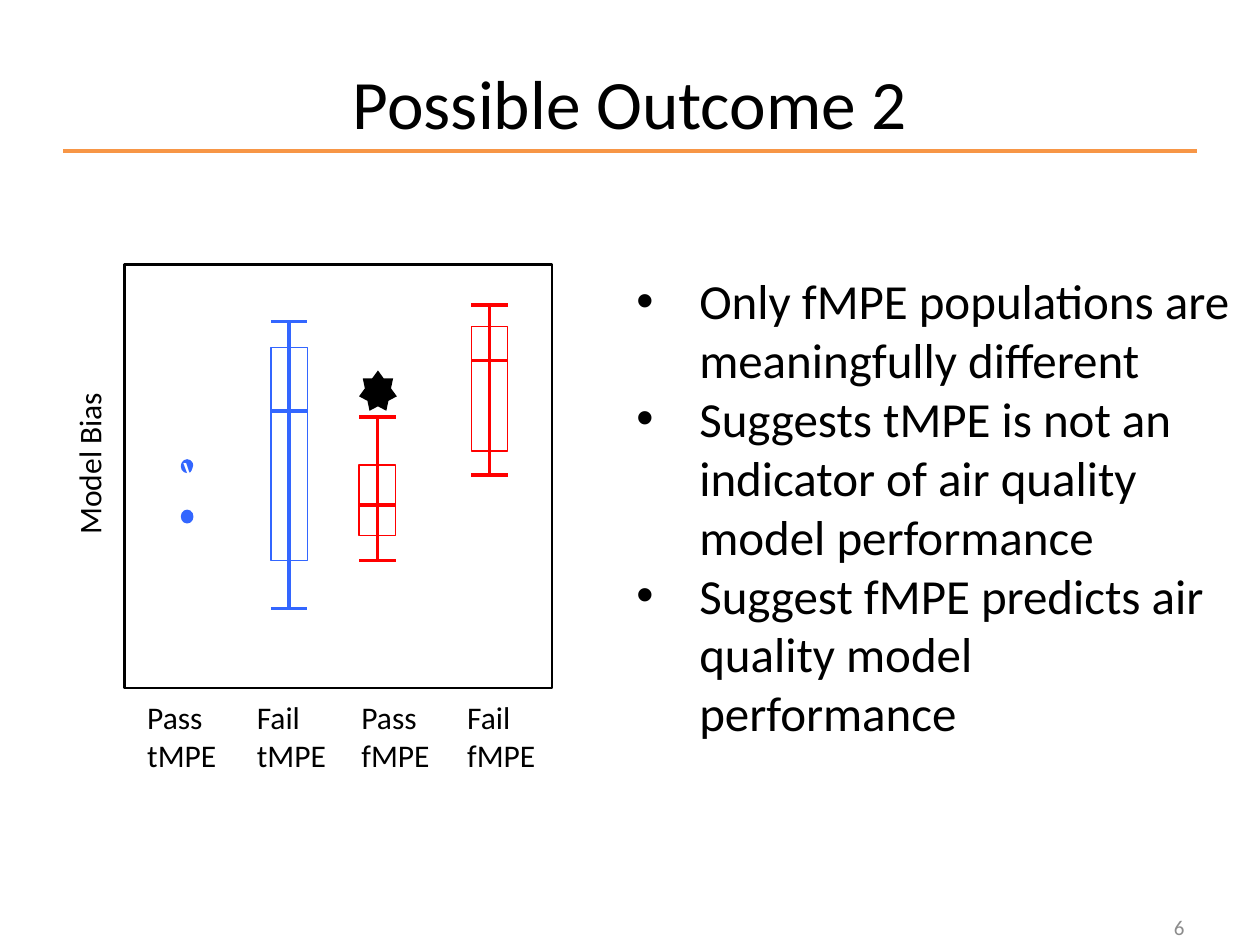
from lxml import etree
from pptx import Presentation
from pptx.dml.color import RGBColor
from pptx.enum.shapes import MSO_CONNECTOR, MSO_SHAPE
from pptx.enum.text import MSO_ANCHOR, MSO_AUTO_SIZE, PP_ALIGN
from pptx.oxml.ns import qn
from pptx.util import Inches, Pt

STRAIGHT = MSO_CONNECTOR.STRAIGHT
RECTANGLE, OVAL, STAR = MSO_SHAPE.RECTANGLE, MSO_SHAPE.OVAL, MSO_SHAPE.STAR_7_POINT
LEFT, CENTER, RIGHT = PP_ALIGN.LEFT, PP_ALIGN.CENTER, PP_ALIGN.RIGHT
TOP, MIDDLE = MSO_ANCHOR.TOP, MSO_ANCHOR.MIDDLE
COLORS = {name: RGBColor.from_string(value) for name, value in {
    "black": "000000", "white": "FFFFFF", "gray": "8C8C8C",
    "orange": "F79646", "blue": "3366FF", "red": "FF0000"}.items()}

presentation = Presentation()
presentation.slide_width, presentation.slide_height = Inches(10), Inches(7.5)
slide = presentation.slides.add_slide(presentation.slide_layouts[1])
shapes = slide.shapes


def add_line(x1, y1, x2, y2, color):
    line = shapes.add_connector(STRAIGHT, Inches(x1), Inches(y1), Inches(x2), Inches(y2))
    line.line.color.rgb = COLORS[color]
    line.line.width = Pt(2)
    etree.SubElement(line._element.spPr, qn("a:effectLst"))


def write(shape, lines, size, color="black", align=LEFT, anchor=TOP):
    frame = shape.text_frame
    frame.text = "\n".join(lines)
    frame.word_wrap = True
    frame.auto_size = MSO_AUTO_SIZE.NONE
    frame.vertical_anchor = anchor
    for paragraph in frame.paragraphs:
        paragraph.alignment = align
        paragraph.space_before = Pt(0)
        paragraph.font.name = "Calibri"
        paragraph.font.size = Pt(size)
        paragraph.font.color.rgb = COLORS[color]


# Title, rule and slide number
title = shapes.title
title.left, title.top, title.width, title.height = map(Inches, (0.5, 0.42, 9, 0.77))
write(title, ["Possible Outcome 2"], 39.6, align=CENTER, anchor=MIDDLE)
add_line(0.5, 1.2, 9.5, 1.2, "orange")
number = shapes.add_textbox(Inches(7.17), Inches(7.21), Inches(2.33), Inches(0.29))
write(number, ["6"], 12, "gray", RIGHT, MIDDLE)

# Conclusions
body = slide.placeholders[1]
body.left, body.top, body.width, body.height = map(Inches, (4.95, 2.1, 4.91, 3.87))
conclusions = ["Only fMPE populations are meaningfully different",
               "Suggests tMPE is not an indicator of air quality model performance",
               "Suggest fMPE predicts air quality model performance"]
body.text_frame.text = "\n".join(conclusions)
write(body, conclusions, 28)
for paragraph in body.text_frame.paragraphs:
    properties = paragraph._p.get_or_add_pPr()
    properties.set("marL", str(Inches(0.5)))
    properties.set("indent", str(-Inches(0.5)))

# Plot frame and axis label
frame = shapes.add_shape(RECTANGLE, Inches(0.99), Inches(2.1), Inches(3.39), Inches(3.36))
frame.shadow.inherit = False
frame.fill.background()
frame.line.color.rgb = COLORS["black"]
frame.line.width = Pt(1.5)
axis_label = shapes.add_textbox(Inches(-0.56), Inches(3.48), Inches(2.53), Inches(0.4))
axis_label.rotation = 270
write(axis_label, ["Model Bias"], 18, align=CENTER)

# Single values for Pass tMPE
for top, label in [(3.65, "v"), (4.05, "")]:
    dot = shapes.add_shape(OVAL, Inches(1.44), Inches(top), Inches(0.09), Inches(0.1))
    dot.shadow.inherit = False
    dot.fill.solid()
    dot.fill.fore_color.rgb = COLORS["blue"]
    dot.line.color.rgb = COLORS["blue"]
    dot.line.width = Pt(0.75)
    if label:
        write(dot, [label], 18, "white", CENTER, MIDDLE)

# Box plots: left, whisker top, box top, median, box bottom, whisker bottom
BOX_WIDTH = 0.29
for left, high, upper, median, lower, low, color in [
        (2.15, 2.55, 2.76, 3.26, 4.45, 4.83, "blue"),
        (2.85, 3.31, 3.69, 4.01, 4.25, 4.45, "red"),
        (3.74, 2.42, 2.59, 2.86, 3.58, 3.77, "red")]:
    box = shapes.add_shape(RECTANGLE, Inches(left), Inches(upper),
                           Inches(BOX_WIDTH), Inches(lower - upper))
    box.shadow.inherit = False
    box.fill.background()
    box.line.color.rgb = COLORS[color]
    box.line.width = Pt(0.75)
    middle = left + BOX_WIDTH / 2
    add_line(middle, high, middle, low, color)
    for level in (high, median, low):
        add_line(left, level, left + BOX_WIDTH, level, color)

# Marker above Pass fMPE
star = shapes.add_shape(STAR, Inches(2.85), Inches(2.94), Inches(0.3), Inches(0.32))
star.shadow.inherit = False
star.fill.solid()
star.fill.fore_color.rgb = COLORS["black"]
star.line.fill.background()

# Category labels
for left, width, lines in [(1.07, 1.01, ["Pass", "tMPE"]), (1.94, 0.92, ["Fail", "tMPE"]),
                           (2.77, 1.01, ["Pass", "fMPE"]), (3.61, 0.86, ["Fail", "fMPE"])]:
    label = shapes.add_textbox(Inches(left), Inches(5.49), Inches(width), Inches(0.71))
    write(label, lines, 18)

presentation.save("out.pptx")
